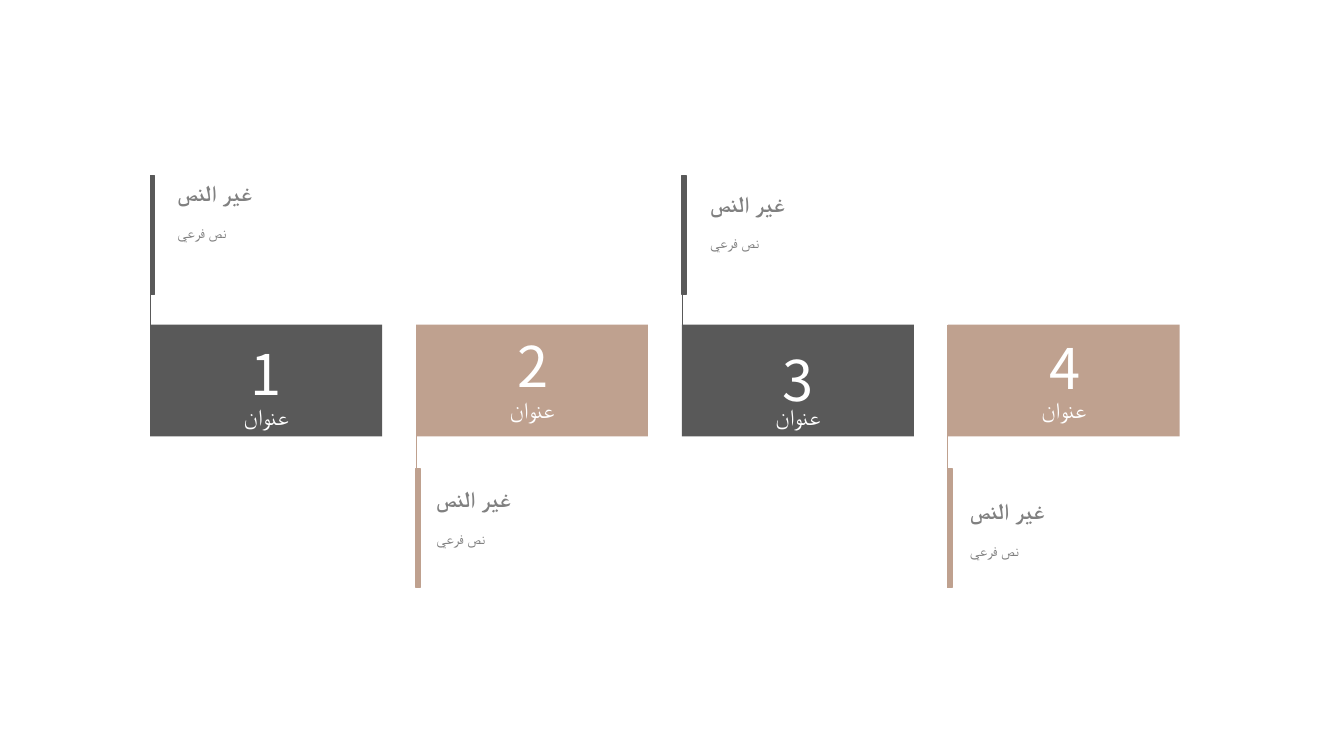
import pptx
import pptx.util
import pptx.dml.color
import pptx.enum.shapes
import pptx.enum.text
import lxml.etree

Inches, Pt = pptx.util.Inches, pptx.util.Pt
RGBColor = pptx.dml.color.RGBColor
MSO_SHAPE = pptx.enum.shapes.MSO_SHAPE
PP_ALIGN = pptx.enum.text.PP_ALIGN
MSO_ANCHOR = pptx.enum.text.MSO_ANCHOR
MSO_AUTO_SIZE = pptx.enum.text.MSO_AUTO_SIZE

FONT = "Noto Sans CJK SC"
DARK = RGBColor(0x59, 0x59, 0x59)
TAN = RGBColor(0xBF, 0xA1, 0x8F)
GREY = RGBColor(0x80, 0x80, 0x80)
WHITE = RGBColor(0xFF, 0xFF, 0xFF)

LEFT, PITCH = 1.49, 2.637
BLOCK_TOP, BLOCK_W, BLOCK_H = 3.22, 2.3, 1.11
BLOCK_BOTTOM = BLOCK_TOP + BLOCK_H
BAR_W, BAR_H = 0.04, 1.18
UPPER_TOP, LOWER_BOTTOM = 1.74, 5.83

prs = pptx.Presentation()
prs.slide_width, prs.slide_height = Inches(13.33), Inches(7.5)
s = prs.slides.add_slide(prs.slide_layouts[6])


def add_rect(x, y, w, h, color):
    sp = s.shapes.add_shape(MSO_SHAPE.RECTANGLE, Inches(x), Inches(y), Inches(w), Inches(h))
    sp.shadow.inherit = False
    sp.fill.solid()
    sp.fill.fore_color.rgb = color
    sp.line.fill.background()
    return sp


def add_text(x, y, w, h, text, size, color, margins, align=PP_ALIGN.LEFT,
             anchor=MSO_ANCHOR.TOP, bold=False, spacing=None, before=None, grow=False):
    """Add a one-paragraph text box; margins are (sides, top and bottom)."""
    tf = s.shapes.add_textbox(Inches(x), Inches(y), Inches(w), Inches(h)).text_frame
    tf.word_wrap = True
    tf.auto_size = MSO_AUTO_SIZE.SHAPE_TO_FIT_TEXT if grow else MSO_AUTO_SIZE.NONE
    tf.vertical_anchor = anchor
    tf.margin_left = tf.margin_right = Inches(margins[0])
    tf.margin_top = tf.margin_bottom = Inches(margins[1])
    p = tf.paragraphs[0]
    p.text = text
    p.alignment = align
    if spacing:
        p.line_spacing = spacing
    if before:
        p.space_before = Pt(before)
    p.font.name, p.font.size, p.font.bold = FONT, Pt(size), bold
    p.font.color.rgb = color


# number, number offset (x, y) from the block, caption offset x, caption top
steps = [
    ("1", 0.56, 0, 0.27, 1.73),
    ("2", 0.57, 0.02, 0.2, 4.76),
    ("3", 0.56, 0.06, 0.28, 1.83),
    ("4", 0.57, 0.04, 0.22, 4.88),
]

for i, (number, number_dx, number_dy, caption_dx, caption_top) in enumerate(steps):
    x = LEFT + i * PITCH
    upper = i % 2 == 0
    color = DARK if upper else TAN
    line_start, line_end = (UPPER_TOP, BLOCK_BOTTOM) if upper else (LOWER_BOTTOM, BLOCK_TOP)

    stem = s.shapes.add_connector(pptx.enum.shapes.MSO_CONNECTOR.STRAIGHT, Inches(x),
                                  Inches(line_start), Inches(x), Inches(line_end))
    stem.line.color.rgb = color
    stem.line.width = Pt(0.5)
    lxml.etree.SubElement(stem._element.spPr, pptx.oxml.ns.qn("a:effectLst"))

    bar = add_rect(x, UPPER_TOP if upper else LOWER_BOTTOM - BAR_H, BAR_W, BAR_H, color)
    bar.line.color.rgb = color
    bar.line.width = Pt(1)

    add_rect(x, BLOCK_TOP, BLOCK_W, BLOCK_H, color)
    if upper:
        style = dict(margins=(0.14, 0.07), anchor=MSO_ANCHOR.MIDDLE, spacing=1.3)
    else:
        style = dict(margins=(0.1, 0.05), before=10, grow=True)
    add_text(x + 0.1, 3.88, 2.1, 0.43 if upper else 0.37, "عنوان", 16, WHITE,
             align=PP_ALIGN.CENTER, **style)
    add_text(x + number_dx, BLOCK_TOP + number_dy, 1.18, 0.77, number, 40, WHITE,
             align=PP_ALIGN.CENTER, **style)

    add_text(x + caption_dx, caption_top, 2.76, 0.37, "غير النص", 16, GREY, (0, 0.11),
             anchor=MSO_ANCHOR.MIDDLE, bold=True)
    add_text(x + caption_dx, caption_top + 0.4, 2.38, 0.6, "نص فرعي", 10.7, GREY, (0, 0),
             spacing=1.5)

prs.save("out.pptx")
